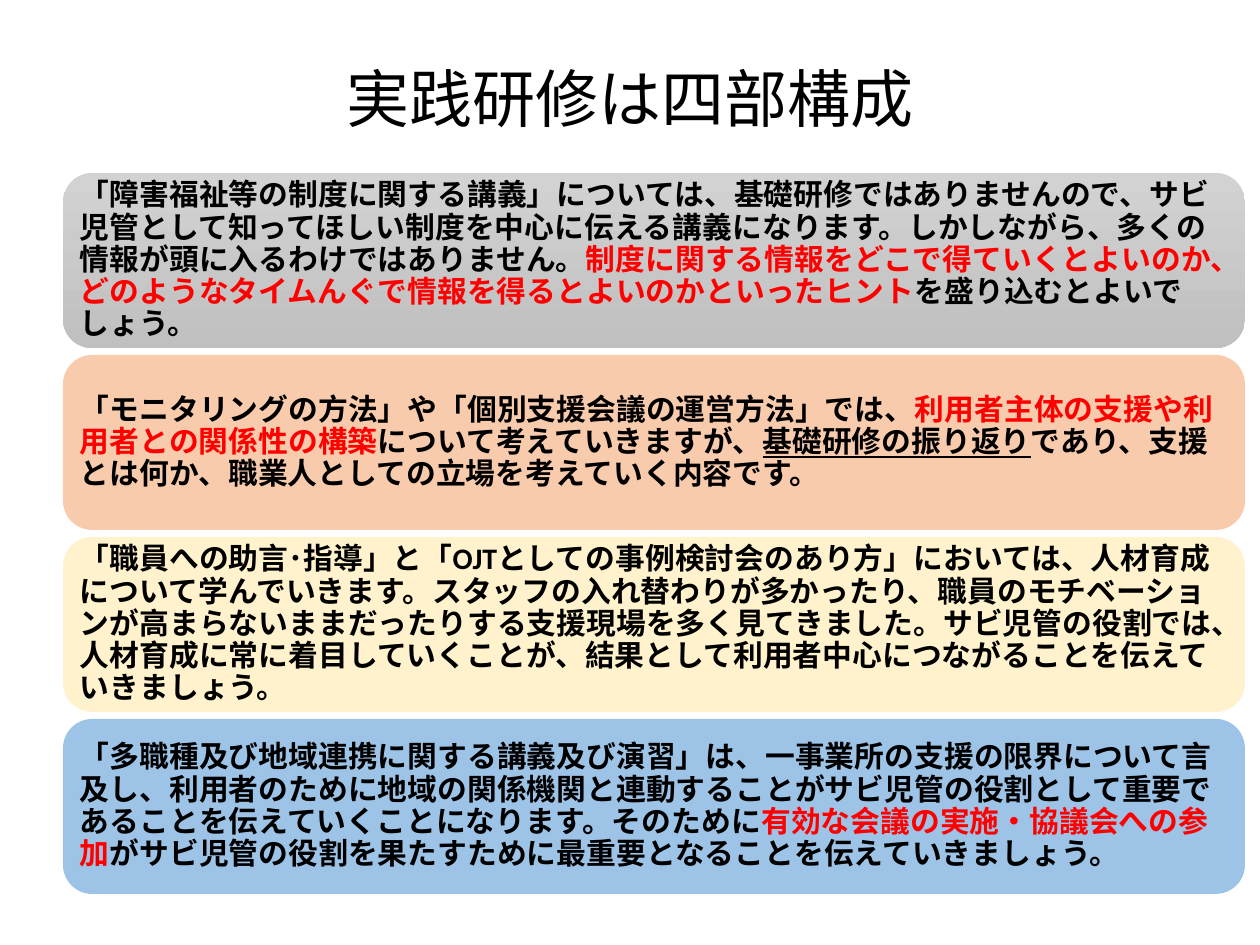
from pptx import Presentation
from pptx import util as u
from pptx.dml.color import RGBColor
from pptx.enum import shapes, text

PX = 914400 / 126
FONT = "Calibri"
BLACK = RGBColor(0x00, 0x00, 0x00)
RED = RGBColor(0xFF, 0x00, 0x00)
LIGHT_GRAY = RGBColor(0xD2, 0xD2, 0xD2)
GRAY = RGBColor(0xC0, 0xC0, 0xC0)
ORANGE = RGBColor(0xF8, 0xCB, 0xAD)
CREAM = RGBColor(0xFF, 0xF2, 0xCC)
BLUE = RGBColor(0x9D, 0xC3, 0xE6)

PLAIN, KEY, UNDERLINED = "plain", "key", "underlined"

# Each panel: fill colours, then its text as (style, words)
PANELS = [
    ((LIGHT_GRAY, GRAY), [
        (PLAIN, "「障害福祉等の制度に関する講義」については、基礎研修ではありませんので、"
                "サビ児管として知ってほしい制度を中心に伝える講義になります。"
                "しかしながら、多くの情報が頭に入るわけではありません。"),
        (KEY, "制度に関する情報をどこで得ていくとよいのか、"
              "どのようなタイムんぐで情報を得るとよいのかといったヒント"),
        (PLAIN, "を盛り込むとよいでしょう。"),
    ]),
    ((ORANGE,), [
        (PLAIN, "「モニタリングの方法」や「個別支援会議の運営方法」では、"),
        (KEY, "利用者主体の支援や利用者との関係性の構築"),
        (PLAIN, "について考えていきますが、"),
        (UNDERLINED, "基礎研修の振り返り"),
        (PLAIN, "であり、支援とは何か、職業人としての立場を考えていく内容です。"),
    ]),
    ((CREAM,), [
        (PLAIN, "「職員への助言･指導」と「OJTとしての事例検討会のあり方」においては、"
                "人材育成について学んでいきます。スタッフの入れ替わりが多かったり、"
                "職員のモチベーションが高まらないままだったりする支援現場を"
                "多く見てきました。サビ児管の役割では、人材育成に常に着目していくことが、"
                "結果として利用者中心につながることを伝えていきましょう。"),
    ]),
    ((BLUE,), [
        (PLAIN, "「多職種及び地域連携に関する講義及び演習」は、"
                "一事業所の支援の限界について言及し、利用者のために地域の関係機関と"
                "連動することがサビ児管の役割として重要であることを"
                "伝えていくことになります。そのために"),
        (KEY, "有効な会議の実施・協議会への参加"),
        (PLAIN, "がサビ児管の役割を果たすために最重要となることを伝えていきましょう。"),
    ]),
]


def px(*lengths):
    return [u.Emu(round(length * PX)) for length in lengths]


class SlideBuilder:
    def __init__(self, page):
        self.page = page

    def panel(self, left, top, width, height, colors):
        """Rounded panel; two colours make a top-to-bottom gradient."""
        shape = self.page.shapes.add_shape(
            shapes.MSO_SHAPE.ROUNDED_RECTANGLE, *px(left, top, width, height))
        shape.shadow.inherit = False
        shape.line.fill.background()
        if len(colors) == 1:
            shape.fill.solid()
            shape.fill.fore_color.rgb = colors[0]
        else:
            shape.fill.gradient()
            shape.fill.gradient_angle = 270
            for stop, color in zip(shape.fill.gradient_stops, colors):
                stop.color.rgb = color

    def text(self, left, top, width, height, spans, size, bold=False,
             align=text.PP_ALIGN.LEFT, inset=9):
        box = self.page.shapes.add_textbox(*px(left, top, width, height))
        frame = box.text_frame
        frame.word_wrap = True
        frame.vertical_anchor = text.MSO_ANCHOR.MIDDLE
        (frame.margin_left, frame.margin_top,
         frame.margin_right, frame.margin_bottom) = px(*[inset] * 4)
        para = frame.paragraphs[0]
        para.alignment = align
        para.line_spacing = 0.9
        para.font.name = FONT
        para.font.size = u.Pt(size)
        para.font.bold = bold
        para.font.color.rgb = BLACK
        for style, words in spans:
            span = para.add_run()
            span.text = words
            if style == KEY:
                span.font.color.rgb = RED
            elif style == UNDERLINED:
                span.font.underline = True


def main():
    deck = Presentation()
    deck.slide_width, deck.slide_height = px(1260, 945)
    page = deck.slides.add_slide(deck.slide_layouts[6])
    builder = SlideBuilder(page)

    builder.text(63, 62, 1134, 81, [(PLAIN, "実践研修は四部構成")], 36,
                 align=text.PP_ALIGN.CENTER)

    left, first_top, width, height, pitch, pad = 63, 173, 1182, 175, 182, 8
    for index, (colors, spans) in enumerate(PANELS):
        top = first_top + index * pitch
        builder.panel(left, top, width, height, colors)
        builder.text(left + pad, top + pad, width - 2 * pad, height - 2 * pad,
                     spans, 17, bold=True)

    deck.save("out.pptx")


if __name__ == "__main__":
    main()
